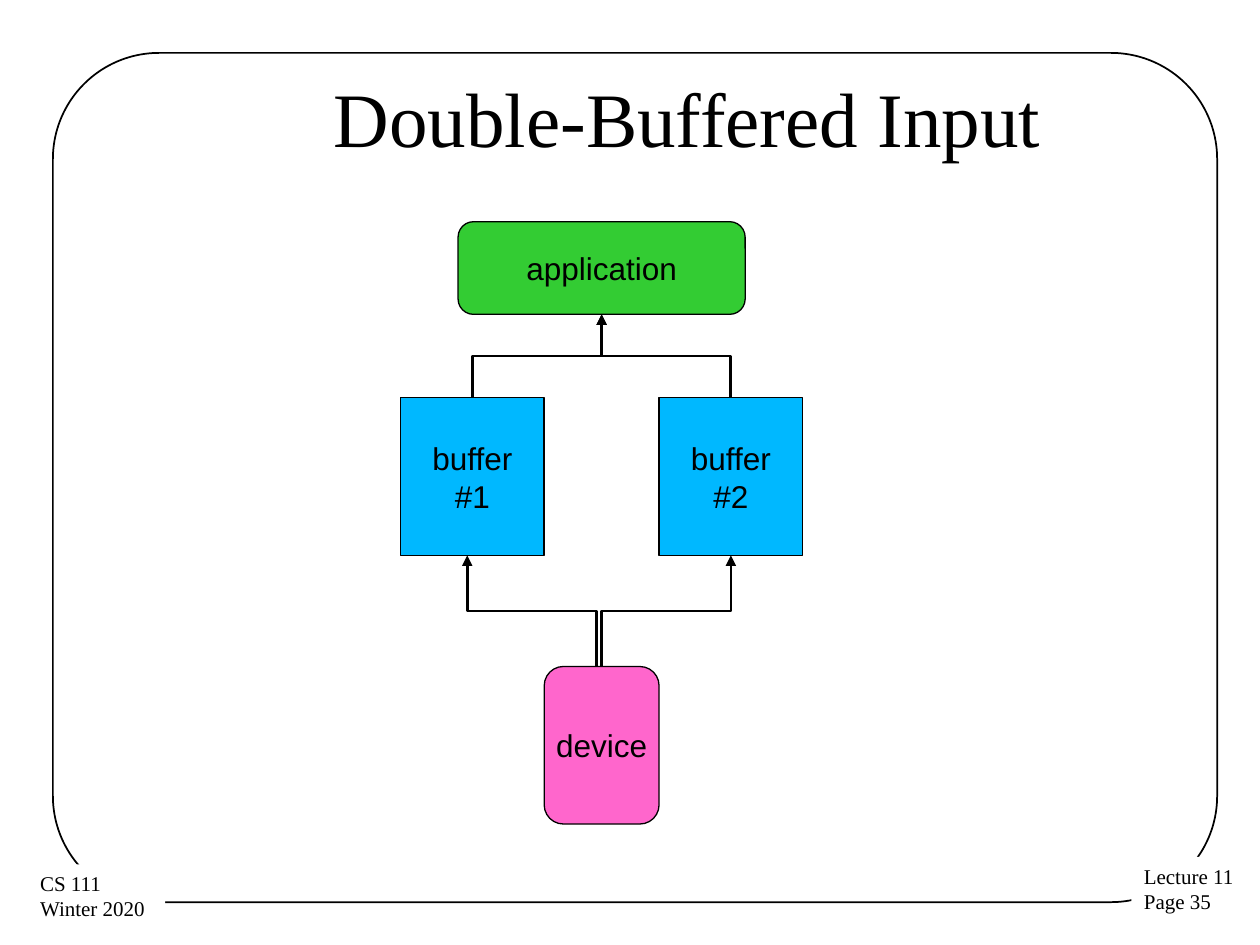
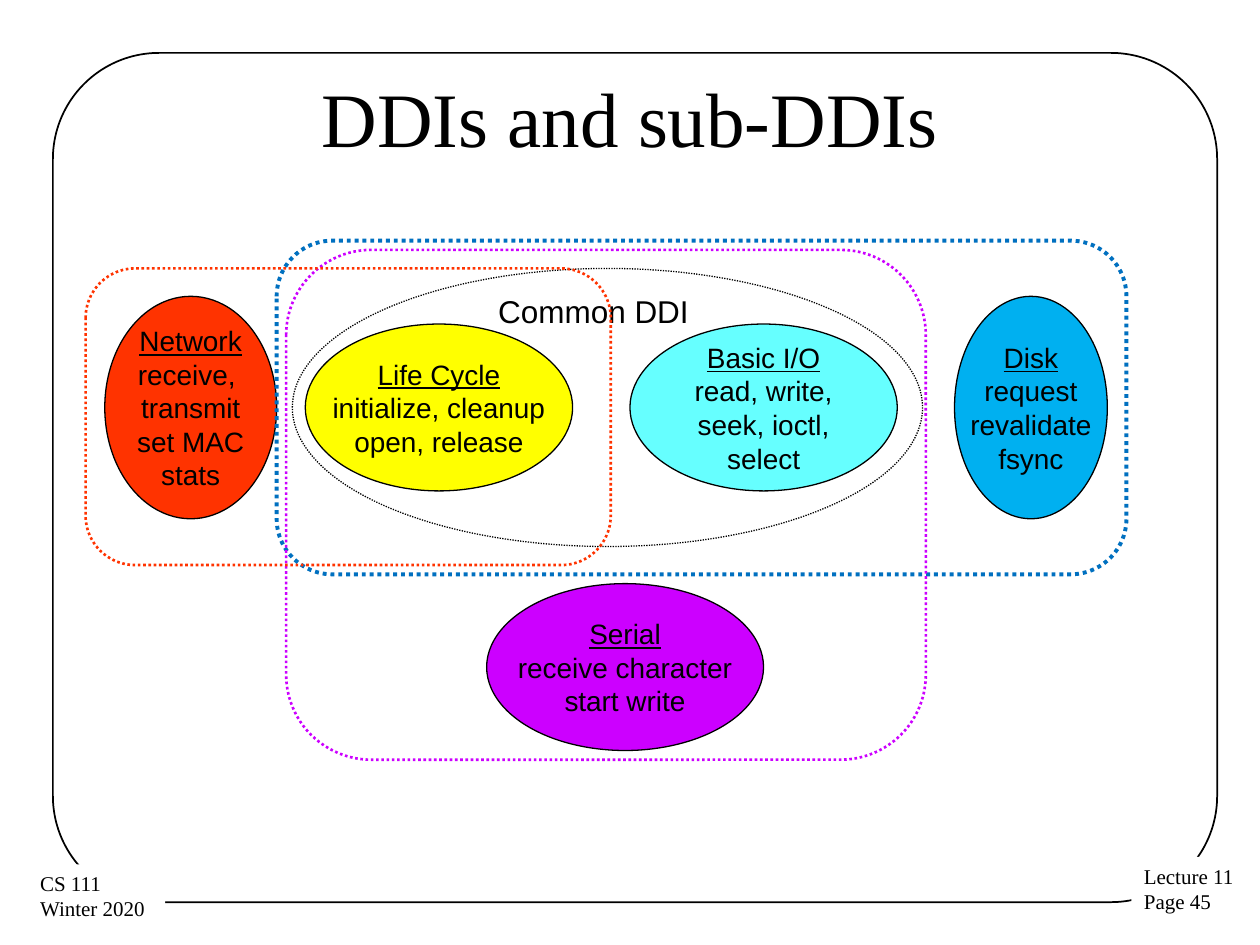
from dataclasses import dataclass

from lxml.etree import SubElement
from pptx import Presentation
from pptx.dml.color import RGBColor
from pptx.enum.dml import MSO_LINE as Dash
from pptx.enum.shapes import MSO_CONNECTOR as Link, MSO_SHAPE as Kind
from pptx.enum.text import MSO_ANCHOR as Anchor, PP_ALIGN as Align
from pptx.oxml.ns import qn
from pptx.util import Inches, Pt

WIDE, HIGH = 10, 7.5
SERIF, SANS = "Times New Roman", "Arial"
BLACK, WHITE = "000000", "FFFFFF"
GREEN, PINK, SKY = "33CC33", "FF66CC", "00B8FF"
RED, YELLOW, AQUA = "FF3300", "FFFF00", "66FFFF"
BLUE, NAVY, PURPLE = "00B0F0", "0070C0", "CC00FF"


@dataclass
class Grid:
    """A box in inches, cut into columns and rows."""
    left: float
    top: float
    width: float
    height: float
    cols: float
    rows: float

    def point(self, col, row):
        return (self.left + col * self.width / self.cols,
                self.top + row * self.height / self.rows)

    def cell(self, col, row, wide, high):
        return (*self.point(col, row),
                wide * self.width / self.cols, high * self.height / self.rows)


PAGE = Grid(0, 0, WIDE, HIGH, 100, 100)


def color(code):
    return RGBColor.from_string(code)


def write(shape, text, size=18, font=SANS, align=Align.CENTER, anchor=Anchor.MIDDLE,
          inset=(0.09, 0.04), wrap=False, head=False):
    """Set text, one paragraph a line; head underlines the first line."""
    frame = shape.text_frame
    frame.word_wrap = wrap
    frame.vertical_anchor = anchor
    frame.margin_left = frame.margin_right = Inches(inset[0])
    frame.margin_top = frame.margin_bottom = Inches(inset[1])
    for i, line in enumerate(text.split("\n")):
        para = frame.paragraphs[0] if i == 0 else frame.add_paragraph()
        para.alignment = align
        run = para.add_run()
        run.text = line
        run.font.name, run.font.size = font, Pt(size)
        run.font.color.rgb = color(BLACK)
        if head and i == 0:
            run.font.underline = True
    return frame


def draw(slide, kind, box, fill=None, line=BLACK, width=0.75, dash=None, bend=None):
    shape = slide.shapes.add_shape(kind, *map(Inches, box))
    shape.shadow.inherit = False
    if fill:
        shape.fill.solid()
        shape.fill.fore_color.rgb = color(fill)
    else:
        shape.fill.background()
    shape.line.color.rgb = color(line)
    shape.line.width = Pt(width)
    if dash:
        shape.line.dash_style = dash
    if bend:
        shape.adjustments[0] = bend
    return shape


def label(slide, box, text, fill=None, **form):
    area = slide.shapes.add_textbox(*map(Inches, box))
    if fill:
        area.fill.solid()
        area.fill.fore_color.rgb = color(fill)
    return write(area, text, **form)


def elbow(slide, start, end):
    """Run down, across and down again, with the arrowhead at the start."""
    (x1, y1), (x2, y2) = start, end
    mid_x, mid_y = (x1 + x2) / 2, (y1 + y2) / 2
    side = (y2 - y1) / 2 * (1 if x2 < x1 else -1)
    rise = abs(x2 - x1) / 2
    ends = mid_x - side, mid_y - rise, mid_x + side, mid_y + rise
    wire = slide.shapes.add_connector(Link.ELBOW, *map(Inches, ends))
    wire.line.color.rgb = color(BLACK)
    wire.line.width = Pt(1.5)
    props = wire.element.spPr
    turn = 90 if x2 < x1 else 270
    props.find(qn("a:xfrm")).set("rot", str(turn * 60000))
    SubElement(props.find(qn("a:ln")), qn("a:headEnd"), type="triangle")
    SubElement(props, qn("a:effectLst"))


def base(deck, title, page, left=0.5, indent=0):
    """Start a slide with its frame, footers and title."""
    slide = deck.slides.add_slide(deck.slide_layouts[6])
    draw(slide, Kind.ROUNDED_RECTANGLE, PAGE.cell(4.2, 5.6, 92.4, 89.87),
         width=1, bend=0.125)
    note = dict(fill=WHITE, size=12, font=SERIF, align=Align.LEFT,
                anchor=Anchor.TOP, inset=(0.1, 0.05))
    label(slide, PAGE.cell(89.8, 90.67, 9.2, 6.8), f"Lecture 11\nPage {page}", **note)
    label(slide, PAGE.cell(2.2, 91.47, 10.9, 6.8), "CS 111\nWinter 2020", **note)
    frame = label(slide, (left, 0.04 * HIGH, 0.9 * WIDE, HIGH / 6), title,
                  size=44, font=SERIF, inset=(0.1, 0.05), wrap=True)
    frame.margin_left = Inches(0.1 + indent)
    return slide


def buffers(slide, grid):
    """Application above two buffers above a device."""
    box, soft = Kind.RECTANGLE, Kind.ROUNDED_RECTANGLE
    for kind, cell, fill, text in (
        (box, (0, 19, 10, 17), SKY, "buffer\n#1"),
        (box, (18, 19, 10, 17), SKY, "buffer\n#2"),
        (soft, (4, 0, 20, 10), GREEN, "application"),
        (soft, (10, 48, 8, 17), PINK, "device"),
    ):
        write(draw(slide, kind, grid.cell(*cell), fill), text)

    # Arrows: the left pair below is nudged so the two stems show
    for col, nudge in ((5, 0.36), (23, 0)):
        elbow(slide, grid.point(14, 10), grid.point(col, 19))
        elbow(slide, grid.point(col - nudge, 36), grid.point(14 - nudge, 48))


def drivers(slide, grid):
    """Interface groups as ovals inside overlapping dotted outlines."""
    def oval(cell, fill, text):
        write(draw(slide, Kind.OVAL, grid.cell(*cell), fill), text, size=16, head=True)

    # Common interface
    oval((57, 9, 28, 18), AQUA, "Basic I/O\nread, write,\nseek, ioctl,\nselect")
    oval((23, 9, 28, 18), YELLOW, "Life Cycle\ninitialize, cleanup\nopen, release")
    draw(slide, Kind.OVAL, grid.cell(21.65, 3, 66, 30), dash=Dash.ROUND_DOT)
    label(slide, grid.cell(42, 5, 27, 5.3), "Common DDI", align=Align.LEFT,
          anchor=Anchor.TOP, wrap=True)

    # Device interfaces
    oval((91, 6, 16, 24), BLUE, "Disk\nrequest\nrevalidate\nfsync")
    oval((2, 6, 18, 24), RED, "Network\nreceive, \ntransmit\nset MAC\nstats")
    oval((42, 37, 29, 18), PURPLE, "Serial\nreceive character\nstart write")

    # What each device covers
    for cell, line, width in (
        ((20, 0, 89, 36), NAVY, 2.25),
        ((21, 1, 67, 55), PURPLE, 1.5),
        ((0, 3, 55, 32), RED, 1.5),
    ):
        draw(slide, Kind.ROUNDED_RECTANGLE, grid.cell(*cell), line=line,
             width=width, dash=Dash.ROUND_DOT, bend=0.167)


def main():
    deck = Presentation()
    deck.slide_width, deck.slide_height = Inches(WIDE), Inches(HIGH)
    slide = base(deck, "Double-Buffered Input", 35, left=0.25, indent=1.41)
    buffers(slide, Grid(3.18, 1.76, 3.19, 4.78, 28, 65))
    slide = base(deck, "DDIs and sub-DDIs", 45)
    drivers(slide, Grid(0.68, 1.91, 8.26, 4.12, 109, 56))
    deck.save("out.pptx")


if __name__ == "__main__":
    main()
